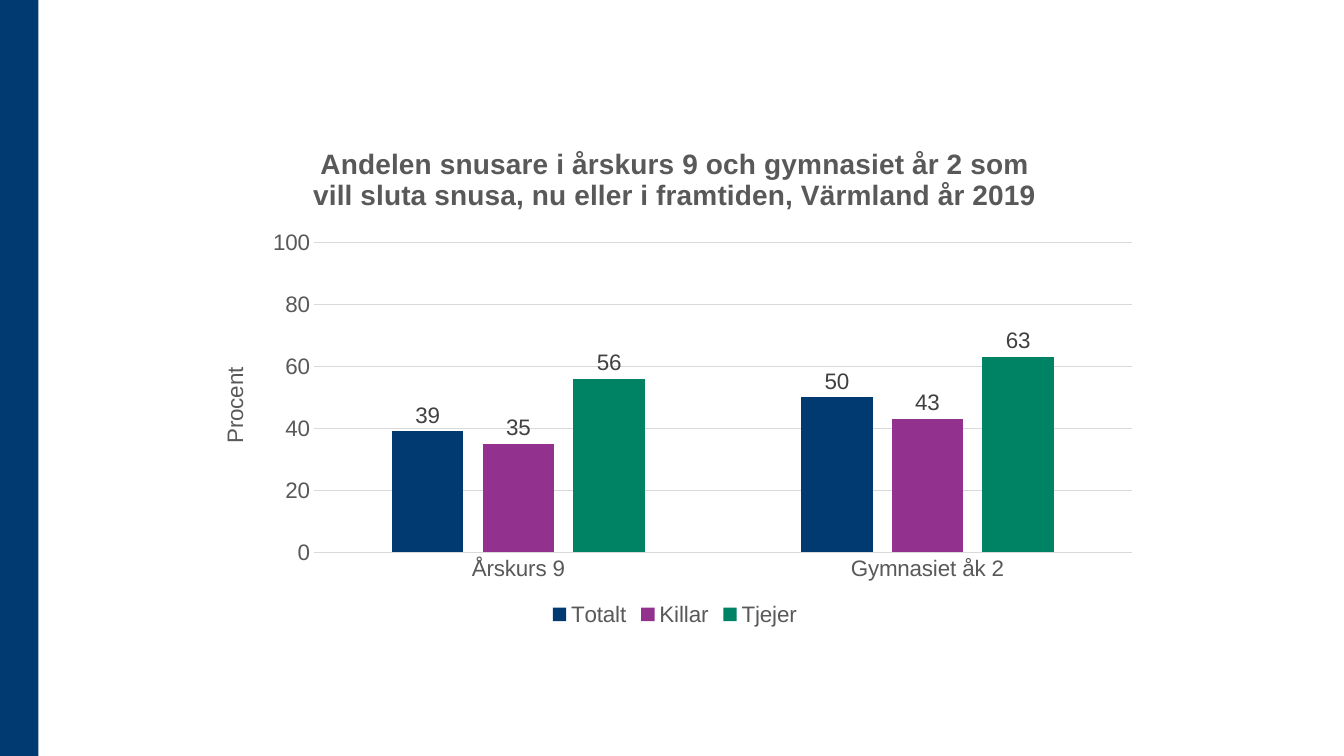
from pptx import Presentation
from pptx.chart.data import CategoryChartData
from pptx.dml.color import RGBColor
from pptx.enum import chart as ch, shapes
from pptx.util import Pt

NAVY = RGBColor(0x00, 0x3A, 0x70)
PURPLE = RGBColor(0x93, 0x32, 0x8E)
GREEN = RGBColor(0x00, 0x82, 0x64)
GREY = RGBColor(0x59, 0x59, 0x59)
DARK_GREY = RGBColor(0x40, 0x40, 0x40)
LIGHT_GREY = RGBColor(0xD9, 0xD9, 0xD9)

GRADES = ["Årskurs 9", "Gymnasiet åk 2"]
GROUPS = [
    ("Totalt", (39, 50), NAVY),
    ("Killar", (35, 43), PURPLE),
    ("Tjejer", (56, 63), GREEN),
]
HEADING = ("Andelen snusare i årskurs 9 och gymnasiet år 2 som vill "
           "sluta snusa, nu eller i framtiden, Värmland år 2019")


class SlideBuilder:
    face = "Arial"
    size = 16

    def __init__(self, slide):
        self.slide = slide

    def style(self, font, size=None, color=GREY, bold=False):
        font.name = self.face
        font.size = Pt(size or self.size)
        font.bold = bold
        font.color.rgb = color

    def band(self, left, top, width, height, color):
        band = self.slide.shapes.add_shape(
            shapes.MSO_SHAPE.RECTANGLE, Pt(left), Pt(top), Pt(width), Pt(height))
        band.shadow.inherit = False
        band.fill.solid()
        band.fill.fore_color.rgb = color
        band.line.fill.background()

    def title(self, owner, wording, **style):
        owner.has_title = True
        frame = (owner.chart_title if hasattr(owner, "chart_title")
                 else owner.axis_title).text_frame
        frame.text = wording
        self.style(frame.paragraphs[0].font, **style)

    def thin_line(self, line):
        line.color.rgb = LIGHT_GREY
        line.width = Pt(0.75)

    def columns(self, left, top, width, height, heading, unit, categories, groups):
        figures = CategoryChartData(number_format="0")
        figures.categories = categories
        for name, shares, _ in groups:
            figures.add_series(name, shares)
        chart = self.slide.shapes.add_chart(
            ch.XL_CHART_TYPE.COLUMN_CLUSTERED,
            Pt(left), Pt(top), Pt(width), Pt(height), figures).chart
        self.style(chart.font)
        self.title(chart, heading, size=20, bold=True)
        chart.chart_title.include_in_layout = False

        chart.has_legend = True
        chart.legend.position = ch.XL_LEGEND_POSITION.BOTTOM
        chart.legend.include_in_layout = False
        self.style(chart.legend.font)

        grades, percent = chart.category_axis, chart.value_axis
        for axis in (grades, percent):
            axis.major_tick_mark = axis.minor_tick_mark = ch.XL_TICK_MARK.NONE
            self.style(axis.tick_labels.font)
        self.thin_line(grades.format.line)
        percent.minimum_scale, percent.maximum_scale = 0, 100
        percent.major_unit = 20
        percent.format.line.fill.background()
        self.thin_line(percent.major_gridlines.format.line)
        self.title(percent, unit)

        plot = chart.plots[0]
        plot.vary_by_categories = False
        plot.gap_width, plot.overlap = 219, -27
        for series, (_, _, color) in zip(plot.series, groups):
            series.format.fill.solid()
            series.format.fill.fore_color.rgb = color
            labels = series.data_labels
            labels.show_value = True
            labels.position = ch.XL_LABEL_POSITION.OUTSIDE_END
            labels.number_format = "0"
            labels.number_format_is_linked = False
            self.style(labels.font, color=DARK_GREY)


def main():
    deck = Presentation()
    deck.slide_width, deck.slide_height = Pt(960), Pt(540)
    builder = SlideBuilder(deck.slides.add_slide(deck.slide_layouts[6]))
    builder.band(0, 0, 27.36, 540, NAVY)
    builder.columns(141.84, 89.28, 680.4, 361.44, HEADING, "Procent", GRADES, GROUPS)
    deck.save("out.pptx")


if __name__ == "__main__":
    main()
